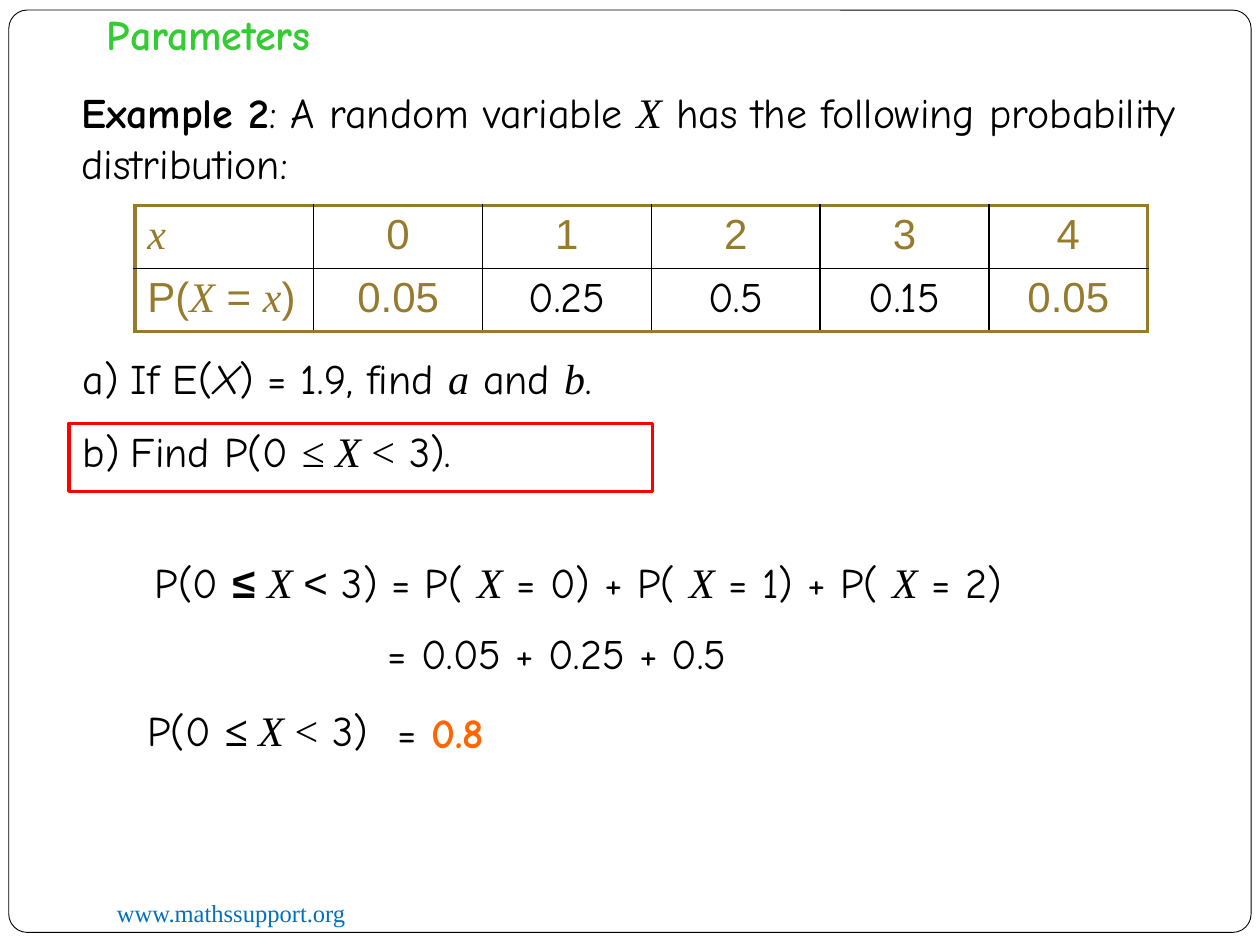
from pptx import Presentation
from pptx.dml.color import RGBColor as RGB
from pptx.enum.shapes import MSO_SHAPE as Form
from pptx.enum.text import PP_ALIGN as Align
from pptx.oxml import parse_xml
from pptx.oxml.ns import nsdecls
from pptx.util import Inches, Pt

HUES = {"ink": "000000", "paper": "FFFFFF", "gold": "977B2D", "green": "33CC33",
        "blue": "0070C0", "red": "FF0000", "orange": "FF6600"}
COMIC, TIMES, ARIAL = "Comic Neue", "Times New Roman", "Arial"
BASE = {"name": COMIC, "size": Pt(24), "bold": False, "italic": False}
LOOKS = {
    "plain": ({}, "ink"),
    "slant": ({"italic": True}, "ink"),
    "bold": ({"bold": True}, "ink"),
    "var": ({"name": TIMES, "italic": True}, "ink"),
    "sign": ({"name": TIMES}, "ink"),
    "heavy": ({"name": TIMES, "bold": True}, "ink"),
    "sans": ({"name": ARIAL}, "ink"),
    "black": ({"name": ARIAL, "bold": True}, "ink"),
    "gold": ({"name": ARIAL}, "gold"),
    "goldvar": ({"name": TIMES, "italic": True}, "gold"),
    "title": ({"bold": True}, "green"),
    "site": ({"name": TIMES, "size": Pt(14)}, "blue"),
    "result": ({"bold": True}, "orange"),
}


class Deck:
    """Hold the style and the current slide, and draw each kind of element."""

    def __init__(self, wide, high):
        self.file = Presentation()
        self.file.slide_width, self.file.slide_height = Inches(wide), Inches(high)
        self.slide = self.file.slides.add_slide(self.file.slide_layouts[6])

    def hue(self, key):
        return RGB.from_string(HUES[key])

    def fill_para(self, para, runs):
        for text, look in runs:
            run = para.add_run()
            run.text = text
            extra, tint = LOOKS[look]
            for key, value in {**BASE, **extra}.items():
                setattr(run.font, key, value)
            run.font.color.rgb = self.hue(tint)

    def text(self, box, *lines, gap=0, pitch=1.0, number=False):
        frame = self.slide.shapes.add_textbox(*map(Inches, box)).text_frame
        frame.word_wrap = True
        for row, runs in enumerate(lines):
            para = frame.add_paragraph() if row else frame.paragraphs[0]
            if number:
                props = para._p.get_or_add_pPr()
                props.set("marL", str(Inches(0.38)))
                props.set("indent", str(-Inches(0.38)))
                props.append(parse_xml(
                    f'<a:buAutoNum {nsdecls("a")} type="alphaLcParenR"/>'))
            para.line_spacing = pitch
            if row:
                para.space_before = Pt(gap)
            self.fill_para(para, runs)

    def shape(self, form, box, line, width, fill=None):
        shape = self.slide.shapes.add_shape(form, *map(Inches, box))
        shape.shadow.inherit = False
        shape.line.color.rgb = self.hue(line)
        shape.line.width = Pt(width)
        if fill:
            shape.fill.solid()
            shape.fill.fore_color.rgb = self.hue(fill)
        else:
            shape.fill.background()
        return shape

    def edge(self, side, outer):
        tint, width = ("gold", 2.25) if outer else ("ink", 1)
        return parse_xml(
            f'<a:ln{side} {nsdecls("a")} w="{Pt(width)}"><a:solidFill>'
            f'<a:srgbClr val="{HUES[tint]}"/></a:solidFill></a:ln{side}>')

    def table(self, left, top, widths, high, rows):
        box = map(Inches, (left, top, sum(widths), high * len(rows)))
        grid = self.slide.shapes.add_table(len(rows), len(widths), *box).table
        for col, wide in zip(grid.columns, widths):
            col.width = Inches(wide)
        for r, row in enumerate(rows):
            for c, runs in enumerate(row):
                cell = grid.cell(r, c)
                para = cell.text_frame.paragraphs[0]
                para.alignment = Align.CENTER if c else Align.LEFT
                self.fill_para(para, runs)
                cell.fill.solid()
                cell.fill.fore_color.rgb = self.hue("paper")
                outer = {"L": c == 0, "R": c == len(widths) - 1,
                         "T": r == 0, "B": r == len(rows) - 1}
                for spot, (side, flag) in enumerate(outer.items()):
                    cell._tc.get_or_add_tcPr().insert(spot, self.edge(side, flag))

    def save(self):
        self.file.save("out.pptx")


def main():
    deck = Deck(10, 7.5)
    frame = deck.shape(Form.ROUNDED_RECTANGLE, (0.07, 0.08, 9.86, 7.32),
                       "ink", 0.5, "paper")
    frame.adjustments[0] = 0.02
    deck.text((0.83, 7.08, 3.25, 0.34), [("www.mathssupport.org", "site")])
    deck.text((0.75, 0.06, 7.13, 0.6), [("Parameters", "title")], pitch=0.9)

    total = [("P(0 ", "plain"), ("≤ ", "black"), ("X ", "var"), ("<", "sans"),
             (" 3) = P( ", "plain")]
    for part in (" = 0) + P( ", " = 1) + P( ", " = 2)"):
        total += [("X", "var"), (part, "plain")]
    deck.text((1.13, 4.37, 8.48, 0.5), total)
    deck.text((2.98, 4.93, 4.78, 0.5), [("= 0.05 + 0.25 + 0.5", "plain")])
    deck.text((1.07, 5.54, 2.15, 0.5),
              [("P(0 ", "plain"), ("≤ ", "heavy"), ("X ", "var"),
               ("<", "sign"), (" 3)", "plain")])
    deck.text((3.06, 5.56, 1.76, 0.5), [("= ", "plain"), ("0.8", "result")])

    odds = [("0.05", "gold"), ("0.25", "plain"), ("0.5", "plain"),
            ("0.15", "plain"), ("0.05", "gold")]
    label = [("P(", "gold"), ("X", "goldvar"), (" = ", "gold"),
             ("x", "goldvar"), (")", "gold")]
    deck.table(1.07, 1.63, [1.42] + [1.34] * 4 + [1.26], 0.5, [
        [[("x", "goldvar")]] + [[(str(n), "gold")] for n in range(5)],
        [label] + [[odd] for odd in odds]])

    deck.text((0.56, 2.75, 5.98, 1.11),
              [("If E(", "plain"), ("X", "slant"), (") = 1.9, find ", "plain"),
               ("a", "var"), (" and ", "plain"), ("b", "var"), (".", "plain")],
              [("Find P(0 ", "plain"), ("≤ ", "sign"), ("X ", "var"),
               ("<", "sign"), (" 3).", "plain")],
              gap=13, number=True)
    deck.text((0.55, 0.64, 9.06, 0.91),
              [("Example 2", "bold"), (": A random variable ", "plain"), ("X", "var"),
               (" has the following probability distribution:", "plain")])
    deck.shape(Form.RECTANGLE, (0.55, 3.36, 4.63, 0.54), "red", 2)
    deck.save()


if __name__ == "__main__":
    main()
